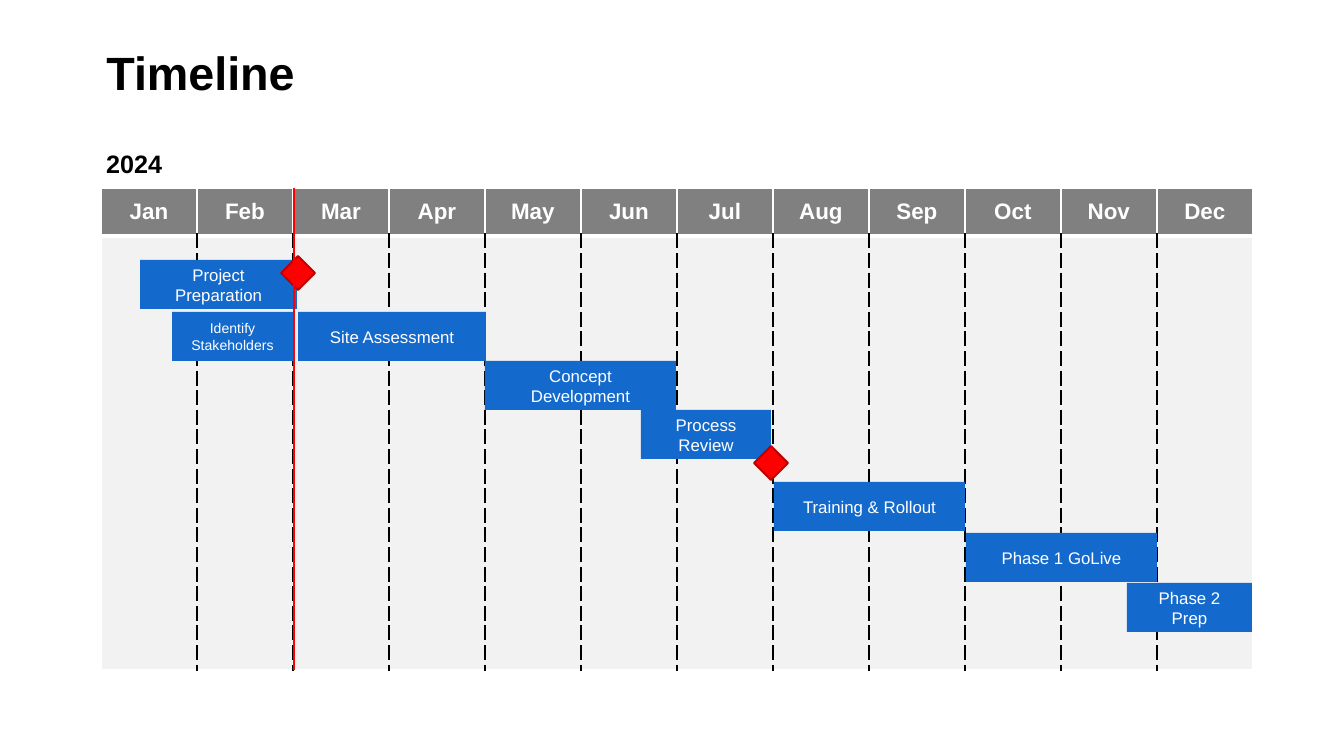
from dataclasses import dataclass

from lxml import etree
from pptx import Presentation
from pptx.dml.color import RGBColor
from pptx.enum.shapes import MSO_CONNECTOR, MSO_SHAPE
from pptx.enum.text import MSO_ANCHOR, MSO_AUTO_SIZE, PP_ALIGN
from pptx.oxml.ns import qn
from pptx.util import Emu, Pt

RECT, DIAMOND = MSO_SHAPE.RECTANGLE, MSO_SHAPE.DIAMOND
STRAIGHT = MSO_CONNECTOR.STRAIGHT
MIDDLE = MSO_ANCHOR.MIDDLE
LEFT, CENTER = PP_ALIGN.LEFT, PP_ALIGN.CENTER
NO_FIT, GROW = MSO_AUTO_SIZE.NONE, MSO_AUTO_SIZE.SHAPE_TO_FIT_TEXT

SCALE = 914400 / 134.4
FONT = "Arial"
COLORS = {
    "black": "000000", "white": "FFFFFF", "head": "808080", "body": "F2F2F2",
    "bar": "146ACC", "red": "FF0000", "edge": "C00000",
}
MONTHS = "Jan Feb Mar Apr May Jun Jul Aug Sep Oct Nov Dec".split()
GRID_X, GRID_Y, COL_W, HEAD_H, BODY_H = 101, 188, 96, 48, 434
BAR_H, MARK = 49, 34
TODAY = 294


@dataclass
class Task:
    name: str
    x: int
    y: int
    w: int
    size: float = 9


@dataclass
class Border:
    side: str
    color: str
    width: float = 1
    dash: str = "solid"


TASKS = [
    Task("Project Preparation", 140, 260, 157),
    Task("Site Assessment", 298, 312, 188),
    Task("Concept Development", 485, 361, 191),
    Task("Process Review", 641, 410, 130),
    Task("Identify Stakeholders", 172, 312, 121, 7.5),
    Task("Training & Rollout", 774, 482, 191),
    Task("Phase 1 GoLive", 966, 533, 191),
    Task("Phase 2 Prep", 1127, 583, 125),
]
MARKS = [(281, 256), (754, 446)]


def px(n: int) -> Emu:
    return Emu(round(n * SCALE))


def box(*sides: int) -> list[Emu]:
    return [px(n) for n in sides]


def rgb(name: str) -> RGBColor:
    return RGBColor.from_string(COLORS[name])


def paint(item, name: str) -> None:
    """Give a shape or table cell a solid fill."""
    item.fill.solid()
    item.fill.fore_color.rgb = rgb(name)


def write(frame, text: str, size: float, color: str, bold=False, align=LEFT):
    para = frame.paragraphs[0]
    para.alignment = align
    run = para.add_run()
    run.text = text
    font = run.font
    font.name, font.size, font.bold = FONT, Pt(size), bold
    font.color.rgb = rgb(color)
    return para


def add_title(slide) -> None:
    title = slide.shapes.title
    title.left, title.top, title.width, title.height = box(93, 40, 1159, 71)
    frame = title.text_frame
    frame.auto_size, frame.vertical_anchor = NO_FIT, MIDDLE
    write(frame, "Timeline", 25, "black", True).line_spacing = 0.9


def add_year(slide) -> None:
    frame = slide.shapes.add_textbox(*box(93, 142, 323, 44)).text_frame
    frame.word_wrap, frame.auto_size = True, GROW
    write(frame, "2024", 13.5, "black", True)


def add_border(cell, border: Border) -> None:
    props = cell._tc.get_or_add_tcPr()
    line = etree.SubElement(props, qn(f"a:ln{border.side}"), w=str(Pt(border.width)))
    fill = etree.SubElement(line, qn("a:solidFill"))
    etree.SubElement(fill, qn("a:srgbClr"), val=COLORS[border.color])
    etree.SubElement(line, qn("a:prstDash"), val=border.dash)


def style_cell(cell, borders: list[Border], fill: str) -> None:
    cell.margin_left = cell.margin_right = px(9)
    cell.margin_top = cell.margin_bottom = px(5)
    cell.vertical_anchor = MIDDLE
    for border in borders:
        add_border(cell, border)
    paint(cell, fill)


def side_line(side: str, outer: bool) -> Border:
    """White at the edge of the grid, dashed black between months."""
    return Border(side, "white") if outer else Border(side, "black", 1, "sysDash")


def add_grid(slide) -> None:
    count = len(MONTHS)
    area = box(GRID_X, GRID_Y, COL_W * count, HEAD_H + BODY_H)
    table = slide.shapes.add_table(2, count, *area).table
    table.horz_banding = False
    table.rows[0].height, table.rows[1].height = box(HEAD_H, BODY_H)
    for i, month in enumerate(MONTHS):
        table.columns[i].width = px(COL_W)
        head, body = table.cell(0, i), table.cell(1, i)
        style_cell(head, [Border("L", "white"), Border("R", "white"),
                          Border("T", "white"), Border("B", "white", 3)], "head")
        write(head.text_frame, month, 12, "white", True, CENTER)
        style_cell(body, [side_line("L", i == 0), side_line("R", i == count - 1),
                          Border("T", "white", 3), Border("B", "white")], "body")


def add_bar(slide, task: Task) -> None:
    bar = slide.shapes.add_shape(RECT, *box(task.x, task.y, task.w, BAR_H))
    bar.shadow.inherit = False
    paint(bar, "bar")
    bar.line.fill.background()
    frame = bar.text_frame
    frame.word_wrap, frame.vertical_anchor = True, MIDDLE
    write(frame, task.name, task.size, "white", align=CENTER)


def add_mark(slide, x: int, y: int) -> None:
    mark = slide.shapes.add_shape(DIAMOND, *box(x, y, MARK, MARK))
    mark.shadow.inherit = False
    paint(mark, "red")
    mark.line.color.rgb = rgb("edge")
    mark.line.width = Pt(1)


def add_today(slide) -> None:
    ends = box(TODAY, GRID_Y, TODAY, GRID_Y + HEAD_H + BODY_H)
    line = slide.shapes.add_connector(STRAIGHT, *ends)
    line.line.color.rgb = rgb("red")
    line.line.width = Pt(1.5)
    etree.SubElement(line._element.spPr, qn("a:effectLst"))


def main() -> None:
    deck = Presentation()
    deck.slide_width, deck.slide_height = box(1344, 756)
    slide = deck.slides.add_slide(deck.slide_layouts[5])
    add_title(slide)
    add_grid(slide)
    for task in TASKS:
        add_bar(slide, task)
    for x, y in MARKS:
        add_mark(slide, x, y)
    add_today(slide)
    add_year(slide)
    deck.save("out.pptx")


if __name__ == "__main__":
    main()
